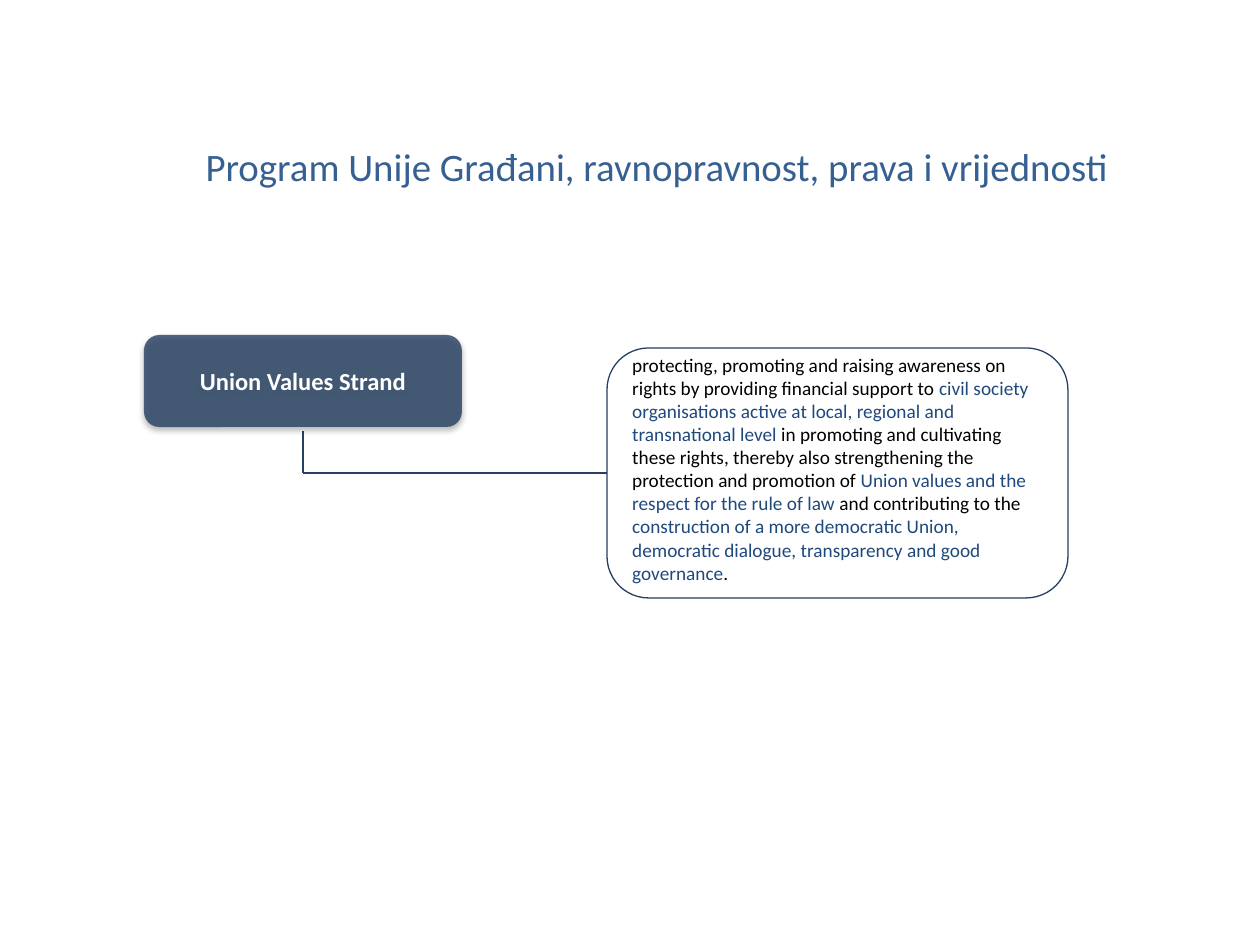
"""Build the slide on the Union Values strand of the citizens programme."""
from lxml import etree
from pptx import Presentation
from pptx.dml.color import RGBColor
from pptx.enum.shapes import MSO_CONNECTOR, MSO_SHAPE
from pptx.enum.text import MSO_ANCHOR, PP_ALIGN
from pptx.oxml import parse_xml
from pptx.oxml.ns import qn
from pptx.util import Pt

ROUND = MSO_SHAPE.ROUNDED_RECTANGLE
STRAIGHT = MSO_CONNECTOR.STRAIGHT
MIDDLE = MSO_ANCHOR.MIDDLE
LEFT, CENTER = PP_ALIGN.LEFT, PP_ALIGN.CENTER
SCALE = 914400 / 126
FONT = "Calibri"
COLORS = {"navy": "254061", "title": "376092", "accent": "1F497D",
          "text": "000000", "white": "FFFFFF"}

TITLE = [("Program Unije Građani, ravnopravnost, prava i vrijednosti", "title")]
STRAND = [("Union Values Strand", "white")]
AIMS = [
    ("protecting, promoting and raising awareness on rights by providing "
     "financial support to ", "text"),
    ("civil society organisations active at local, regional and "
     "transnational level", "accent"),
    (" in promoting and cultivating these rights, thereby also strengthening "
     "the protection and promotion of ", "text"),
    ("Union values and the respect for the rule of law ", "accent"),
    ("and contributing to the ", "text"),
    ("construction of a more democratic Union, democratic dialogue, "
     "transparency and good governance", "accent"),
    (".", "text"),
]

TITLE_BOX = (192, 137, 930, 64)
STRAND_BOX = (144, 335, 318, 92)
AIMS_BOX = (607, 348, 461, 250)
LINK_GAP = 4

SHADOW = (
    '<a:effectLst xmlns:a="http://schemas.openxmlformats.org/drawingml/2006/main">'
    '<a:outerShdw blurRad="44450" dist="27940" dir="5400000" algn="ctr" rotWithShape="0">'
    '<a:srgbClr val="000000"><a:alpha val="32000"/></a:srgbClr>'
    '</a:outerShdw></a:effectLst>')


def px(n):
    return round(n * SCALE)


def rgb(name):
    return RGBColor.from_string(COLORS[name])


def write(sp, runs, size, align, insets, bold=False):
    tf = sp.text_frame
    tf.word_wrap = True
    tf.vertical_anchor = MIDDLE
    tf.margin_left, tf.margin_top, tf.margin_right, tf.margin_bottom = map(px, insets)
    p = tf.paragraphs[0]
    p.alignment = align
    for text, color in runs:
        r = p.add_run()
        r.text = text
        r.font.name = FONT
        r.font.size = Pt(size)
        r.font.bold = bold
        r.font.color.rgb = rgb(color)
    return p


def add_box(shapes, box):
    sp = shapes.add_shape(ROUND, *map(px, box))
    sp.shadow.inherit = False
    return sp


def add_link(shapes, start, end):
    line = shapes.add_connector(STRAIGHT, *map(px, start + end))
    line.line.color.rgb = rgb("navy")
    line.line.width = Pt(1)
    etree.SubElement(line._element.spPr, qn("a:effectLst"))


def main():
    prs = Presentation()
    prs.slide_width, prs.slide_height = px(1260), px(945)
    shapes = prs.slides.add_slide(prs.slide_layouts[6]).shapes

    aims = add_box(shapes, AIMS_BOX)
    aims.fill.background()
    aims.line.color.rgb = rgb("navy")
    aims.line.width = Pt(0.75)
    write(aims, AIMS, 11, LEFT, (13, 6, 13, 15))

    left, top, width, height = STRAND_BOX
    x = left + width // 2
    corner = (x, AIMS_BOX[1] + AIMS_BOX[3] // 2)
    add_link(shapes, (x, top + height + LINK_GAP), corner)
    add_link(shapes, corner, (AIMS_BOX[0], corner[1]))

    strand = add_box(shapes, STRAND_BOX)
    strand.fill.solid()
    strand.fill.fore_color.rgb = rgb("navy")
    strand.line.fill.background()
    spPr = strand._element.spPr
    color = spPr.find(qn("a:solidFill")).find(qn("a:srgbClr"))
    etree.SubElement(color, qn("a:alpha"), val="80000")
    spPr.replace(spPr.find(qn("a:effectLst")), parse_xml(SHADOW))
    write(strand, STRAND, 14, CENTER, (13, 6, 13, 6), bold=True)

    title = shapes.add_textbox(*map(px, TITLE_BOX))
    write(title, TITLE, 22.2, CENTER, (9, 5, 9, 5)).line_spacing = 0.9

    prs.save("out.pptx")


if __name__ == "__main__":
    main()
